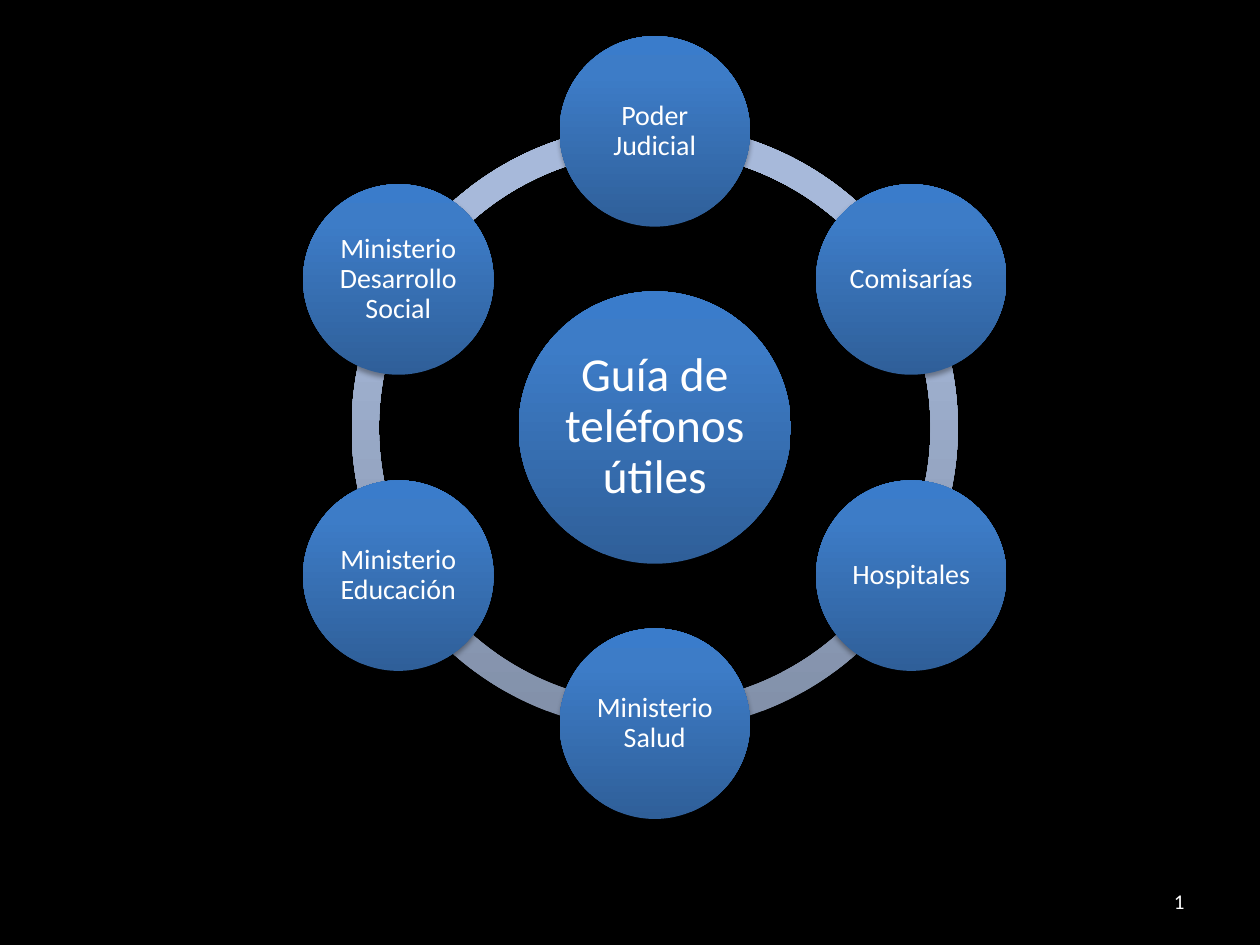
from copy import deepcopy
from math import cos, radians, sin

from lxml.etree import SubElement
from pptx import Presentation
from pptx.dml.color import RGBColor
from pptx.enum.shapes import MSO_SHAPE
from pptx.enum.text import MSO_ANCHOR, PP_ALIGN
from pptx.oxml.ns import qn
from pptx.util import Cm, Pt

ARC_STOPS = [(0, "818FA8"), (0.8, "A7B9DA"), (1, "A7BADC")]
CIRCLE_STOPS = [(0, "2F5F99"), (0.8, "3D7CC7"), (1, "3A7CCB")]
TOPICS = [
    "Poder Judicial",
    "Comisarías",
    "Hospitales",
    "Ministerio Salud",
    "Ministerio Educación",
    "Ministerio Desarrollo Social",
]


def color(value):
    return RGBColor.from_string(value)


def put_text(sp, text, size=16, align=PP_ALIGN.CENTER, inset=0.05, spacing=0.9):
    tf = sp.text_frame
    tf.word_wrap = True
    tf.vertical_anchor = MSO_ANCHOR.MIDDLE
    tf.margin_left = tf.margin_right = Cm(inset)
    tf.margin_top = tf.margin_bottom = Cm(inset)
    p = tf.paragraphs[0]
    p.alignment = align
    p.line_spacing = spacing
    r = p.add_run()
    r.text = text
    r.font.size = Pt(size)
    r.font.name = "Calibri"
    r.font.color.rgb = color("FFFFFF")
    return r


def add_shadow(sp):
    sp.shadow.inherit = False
    effects = sp._element.spPr.find(qn("a:effectLst"))
    shadow = SubElement(effects, qn("a:outerShdw"), blurRad=str(Pt(3.1)),
                        dist=str(Pt(1.8)), dir="5400000", rotWithShape="0")
    shade = SubElement(shadow, qn("a:srgbClr"), val="000000")
    SubElement(shade, qn("a:alpha"), val="35000")


def add_round(s, kind, cx, cy, size, stops):
    sp = s.shapes.add_shape(kind, Cm(cx - size / 2), Cm(cy - size / 2), Cm(size), Cm(size))
    sp.line.fill.background()
    sp.fill.gradient()
    sp.fill.gradient_angle = 90
    stop_list = sp._element.spPr.find(".//" + qn("a:gsLst"))
    stop_list.append(deepcopy(stop_list[0]))
    for stop, (position, value) in zip(sp.fill.gradient_stops, stops):
        stop.position = position
        stop.color.rgb = color(value)
    add_shadow(sp)
    return sp


def add_radial_cycle(s, left, top, width, height, title, topics):
    cx, cy = left + width / 2, top + height / 2
    node = 3.84
    radius = (height - node) / 2
    step = 360 / len(topics)
    angles = [270 + i * step for i in range(len(topics))]

    for angle in reversed(angles):
        arc = add_round(s, MSO_SHAPE.BLOCK_ARC, cx, cy, 12.22, ARC_STOPS)
        arc.adjustments[0] = angle % 360 * 0.6
        arc.adjustments[1] = (angle + step) % 360 * 0.6
        arc.adjustments[2] = 0.045

    hub = add_round(s, MSO_SHAPE.OVAL, cx, cy, 5.49, CIRCLE_STOPS)
    put_text(hub, title, size=27, inset=0.1)
    for angle, topic in zip(angles, topics):
        x = cx + radius * cos(radians(angle))
        y = cy + radius * sin(radians(angle))
        put_text(add_round(s, MSO_SHAPE.OVAL, x, y, node, CIRCLE_STOPS), topic)


def add_slide_number(s, left, top, width, height, number):
    sp = s.shapes.add_textbox(Cm(left), Cm(top), Cm(width), Cm(height))
    r = put_text(sp, number, size=12, align=PP_ALIGN.RIGHT, inset=0.25, spacing=1.0)
    field = r._r
    field.tag = qn("a:fld")
    field.set("id", "{B6F15528-21DE-4FAA-801E-634DDDAF4B2B}")
    field.set("type", "slidenum")


def main():
    prs = Presentation()
    prs.slide_width, prs.slide_height = Cm(25.4), Cm(19.05)
    s = prs.slides.add_slide(prs.slide_layouts[6])
    s.background.fill.solid()
    s.background.fill.fore_color.rgb = color("000000")
    add_slide_number(s, 18.2, 17.66, 5.93, 1.01, "1")
    add_radial_cycle(s, 6.1, 0.73, 14.2, 15.78, "Guía de teléfonos útiles", TOPICS)
    prs.save("out.pptx")


if __name__ == "__main__":
    main()
